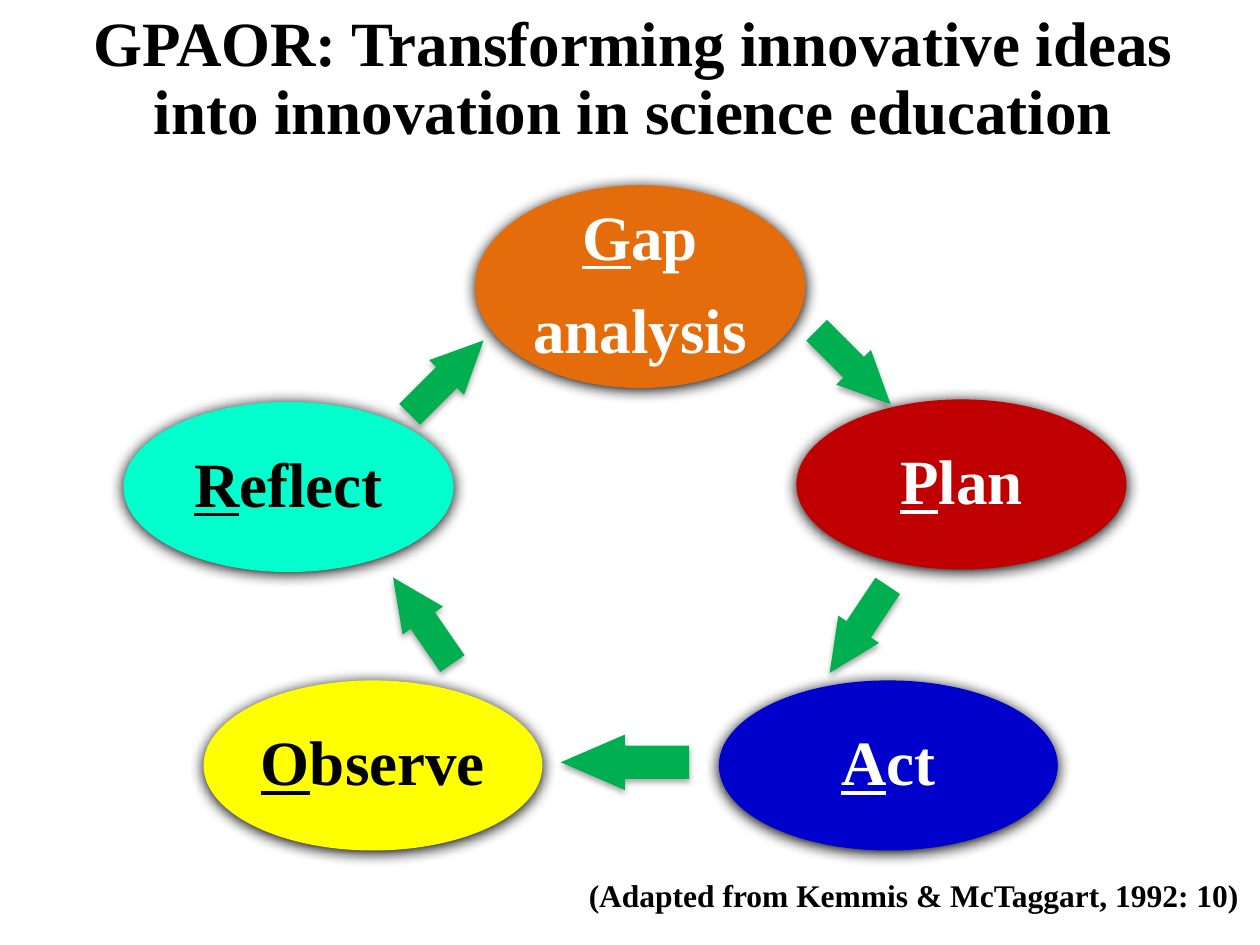
from lxml import etree
from pptx import Presentation
from pptx.dml.color import RGBColor
from pptx.enum.shapes import MSO_SHAPE
from pptx.enum.text import MSO_ANCHOR, MSO_AUTO_SIZE, PP_ALIGN
from pptx.oxml.ns import qn
from pptx.util import Inches, Pt

OVAL, ARROW = MSO_SHAPE.OVAL, MSO_SHAPE.RIGHT_ARROW
CENTER, RIGHT = PP_ALIGN.CENTER, PP_ALIGN.RIGHT
MIDDLE, BOTTOM = MSO_ANCHOR.MIDDLE, MSO_ANCHOR.BOTTOM

BLACK = RGBColor(0x00, 0x00, 0x00)
WHITE = RGBColor(0xFF, 0xFF, 0xFF)
ORANGE = RGBColor(0xE4, 0x6C, 0x0A)
RED = RGBColor(0xC0, 0x00, 0x00)
BLUE = RGBColor(0x00, 0x00, 0xCC)
YELLOW = RGBColor(0xFF, 0xFF, 0x00)
AQUA = RGBColor(0x00, 0xFF, 0xCC)
GREEN = RGBColor(0x00, 0xB0, 0x50)

deck = Presentation()
deck.slide_width, deck.slide_height = Inches(10), Inches(7.5)
COLUMN, ROW = deck.slide_width / 100, deck.slide_height / 75
page = deck.slides.add_slide(deck.slide_layouts[5])


def add_span(para, text, size, color, underline=False):
    span = para.add_run()
    span.text = text
    span.font.name = "Times New Roman"
    span.font.size = Pt(size)
    span.font.bold = True
    span.font.underline = underline
    span.font.color.rgb = color


def add_centered(kind, x, y, width, height, color, blur, drop, alpha):
    """Add a filled shape around a grid point, with a soft shadow below it."""
    shape = page.shapes.add_shape(
        kind, int((x - width / 2) * COLUMN), int((y - height / 2) * ROW),
        int(width * COLUMN), int(height * ROW))
    shape.fill.solid()
    shape.fill.fore_color.rgb = color
    shape.line.fill.background()
    shape.shadow.inherit = False
    effects = shape._element.spPr.find(qn("a:effectLst"))
    shadow = etree.SubElement(
        effects, qn("a:outerShdw"), blurRad=str(Pt(blur)), dist=str(Pt(drop)),
        dir="5400000", rotWithShape="0")
    tone = etree.SubElement(shadow, qn("a:srgbClr"), val="000000")
    etree.SubElement(tone, qn("a:alpha"), val=str(alpha * 1000))
    return shape


# Title
title = page.shapes.title
title.left, title.top = int(4.8 * COLUMN), int(0.1 * ROW)
title.width, title.height = int(90.9 * COLUMN), int(12.2 * ROW)
title.text_frame.auto_size = MSO_AUTO_SIZE.NONE
title.text_frame.vertical_anchor = BOTTOM
para = title.text_frame.paragraphs[0]
para.alignment, para.line_spacing = CENTER, 0.9
add_span(para, "GPAOR: Transforming innovative ideas into innovation in science education",
         36, BLACK)

# Steps of the cycle: lines of text, centre, size, fill and text colour
steps = [
    (["Gap", "analysis"], 50.8, 22.75, 26.2, 16.1, ORANGE, WHITE),
    (["Plan"], 76.3, 38.45, 26.2, 13.5, RED, WHITE),
    (["Act"], 70.5, 60.75, 26.9, 13.5, BLUE, WHITE),
    (["Observe"], 29.6, 60.75, 26.9, 13.5, YELLOW, BLACK),
    (["Reflect"], 22.9, 38.65, 26.2, 13.5, AQUA, BLACK),
]
for lines, x, y, width, height, fill, ink in steps:
    step = add_centered(OVAL, x, y, width, height, fill, 8.5, 1, 100)
    frame = step.text_frame
    frame.word_wrap = True
    frame.vertical_anchor = MIDDLE
    frame.margin_left = frame.margin_right = int(0.5 * COLUMN)
    frame.margin_top = frame.margin_bottom = 0
    for index, line in enumerate(lines):
        para = frame.add_paragraph() if index else frame.paragraphs[0]
        para.alignment, para.line_spacing = CENTER, 0.9
        if index < len(lines) - 1:
            para.space_after = Pt(14)
        if index == 0:
            add_span(para, line[0], 36, ink, underline=True)
            line = line[1:]
        add_span(para, line, 36, ink)

# Arrows between the steps: centre, size and direction
arrows = [
    (67.75, 29.15, 8.3, 3.9, 45),
    (68.15, 49.95, 8.3, 3.9, 123.7),
    (49.6, 60.5, 10.2, 4.4, 180),
    (33.55, 49.25, 8.3, 3.9, 235.4),
    (35.45, 29.95, 8.3, 3.9, 315),
]
for x, y, width, height, angle in arrows:
    arrow = add_centered(ARROW, x, y, width, height, GREEN, 3.5, 2.2, 32)
    arrow.rotation = angle
    arrow.adjustments[0] = 0.6
    arrow.adjustments[1] = width / height / 2

# Citation
citation = page.shapes.add_textbox(
    int(39.1 * COLUMN), int(69 * ROW), int(60.2 * COLUMN), int(5 * ROW))
citation.text_frame.word_wrap = True
para = citation.text_frame.paragraphs[0]
para.alignment = RIGHT
add_span(para, "(Adapted from Kemmis & McTaggart, 1992: 10)", 18, BLACK)

deck.save("out.pptx")
